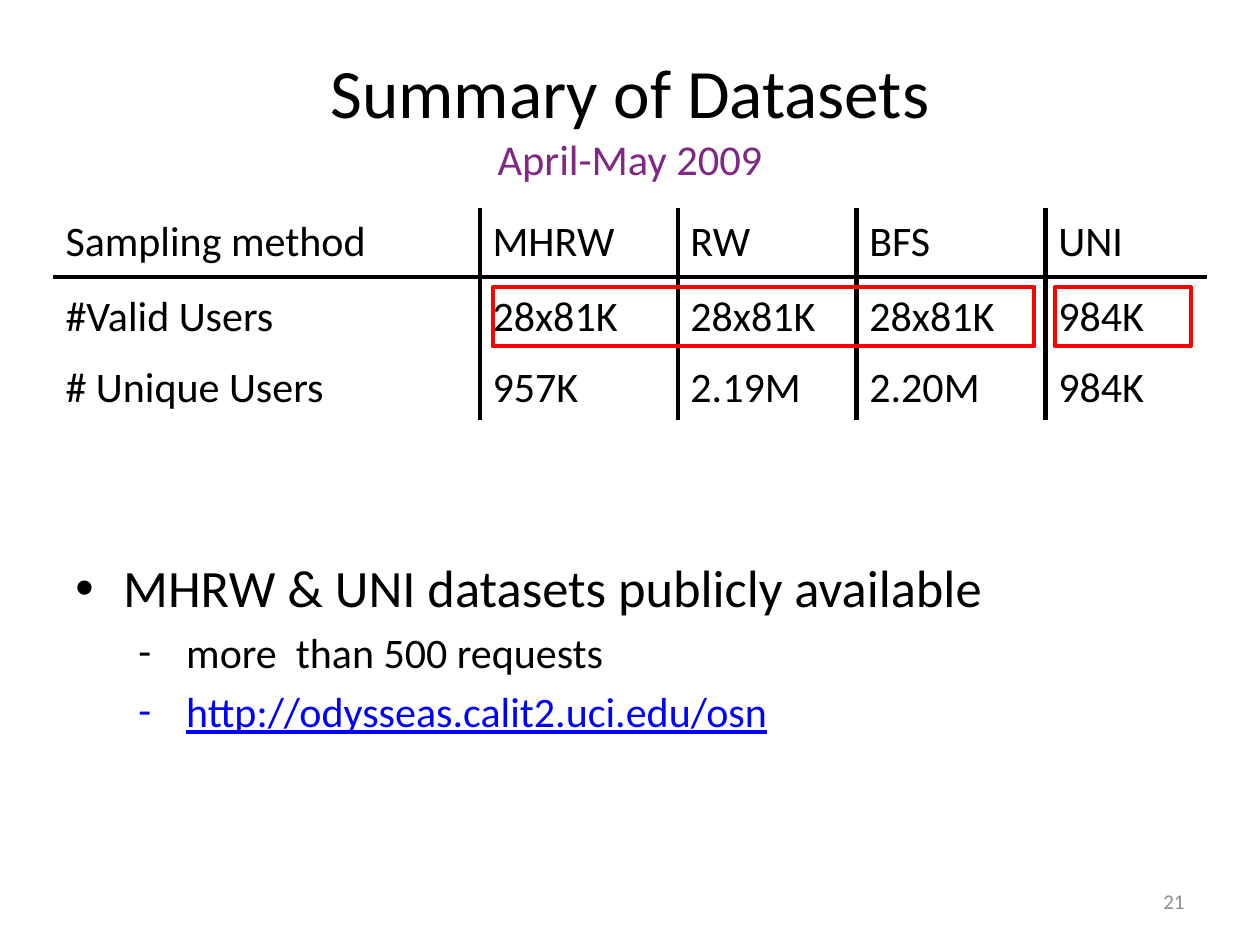
from dataclasses import dataclass
from itertools import accumulate

from lxml import etree
from pptx import Presentation
from pptx.dml.color import RGBColor
from pptx.enum.shapes import MSO_SHAPE
from pptx.enum.text import MSO_ANCHOR, MSO_AUTO_SIZE, PP_ALIGN
from pptx.oxml.ns import qn
from pptx.util import Inches, Pt

RECTANGLE = MSO_SHAPE.RECTANGLE
MIDDLE = MSO_ANCHOR.MIDDLE
NO_FIT = MSO_AUTO_SIZE.NONE
CENTER, RIGHT = PP_ALIGN.CENTER, PP_ALIGN.RIGHT
SLIDE_WIDTH, SLIDE_HEIGHT = Inches(10), Inches(7.5)
GRID_UNIT = SLIDE_WIDTH // 100

ROWS = [
    ["Sampling method", "MHRW", "RW", "BFS", "UNI"],
    ["#Valid Users", "28x81K", "28x81K", "28x81K", "984K"],
    ["# Unique Users", "957K", "2.19M", "2.20M", "984K"],
]
COLUMN_SHARES = [0.37, 0.1715, 0.155, 0.1638, 0.1397]
ROW_SHARES = [0.327, 0.375, 0.298]


@dataclass(frozen=True)
class Theme:
    """Colours, font and type sizes of the slide."""
    font: str = "Calibri"
    ink: str = "000000"
    accent: str = "802884"
    link: str = "0000FF"
    muted: str = "8C8C8C"
    mark: str = "FF0000"
    title: float = 39.6
    subtitle: float = 24.3
    heading: float = 30
    body: float = 24
    footer: float = 12
    rule: float = 3
    outline: float = 2.25


@dataclass(frozen=True)
class Box:
    """A rectangle in grid units, a hundred units to the slide's width."""
    left: float
    top: float
    width: float
    height: float

    def emu(self):
        """Return left, top, width and height as lengths."""
        sides = (self.left, self.top, self.width, self.height)
        return [round(side * GRID_UNIT) for side in sides]


THEME = Theme()


def style(span, size, color=THEME.ink):
    """Set the font, size and colour of a run."""
    span.font.name = THEME.font
    span.font.size = Pt(size)
    span.font.color.rgb = RGBColor.from_string(color)


def add_text(page, box):
    """Add a wrapping text box and return its text frame."""
    frame = page.shapes.add_textbox(*box.emu()).text_frame
    frame.word_wrap = True
    return frame


def fill_title(page, box):
    """Place the two-line title in its placeholder."""
    title = page.shapes.title
    title.left, title.top, title.width, title.height = box.emu()
    frame = title.text_frame
    frame.text = "Summary of Datasets\vApril-May 2009"
    frame.auto_size = NO_FIT
    frame.vertical_anchor = MIDDLE
    para = frame.paragraphs[0]
    para.alignment = CENTER
    heading, period = para.runs
    style(heading, THEME.title)
    style(period, THEME.subtitle, THEME.accent)


def set_borders(cell, ruled):
    """Rule the named sides of a cell and clear its other sides."""
    properties = cell._tc.get_or_add_tcPr()
    for position, side in enumerate("LRTB"):
        line = etree.Element(qn(f"a:ln{side}"), w=str(Pt(THEME.rule)))
        if side in ruled:
            fill = etree.SubElement(line, qn("a:solidFill"))
            etree.SubElement(fill, qn("a:srgbClr"), val=THEME.ink)
        else:
            etree.SubElement(line, qn("a:noFill"))
        properties.insert(position, line)


def ruled_sides(row, column):
    """Name the sides with a rule: between columns and below the header."""
    left = "L" if column > 0 else ""
    right = "R" if column < len(COLUMN_SHARES) - 1 else ""
    return left + right + {0: "B", 1: "T"}.get(row, "")


def add_dataset_table(page, box):
    """Build the table of sampling methods."""
    frame = page.shapes.add_table(len(ROWS), len(COLUMN_SHARES), *box.emu())
    table = frame.table
    table.first_row = table.horz_banding = False
    for column, share in zip(table.columns, COLUMN_SHARES):
        column.width = round(box.width * share * GRID_UNIT)
    for row, share in zip(table.rows, ROW_SHARES):
        row.height = round(box.height * share * GRID_UNIT)
    for r, words in enumerate(ROWS):
        for c, word in enumerate(words):
            cell = table.cell(r, c)
            cell.text = word
            cell.vertical_anchor = MIDDLE
            cell.fill.background()
            set_borders(cell, ruled_sides(r, c))
            style(cell.text_frame.paragraphs[0].runs[0], THEME.body)


def add_marks(page, box):
    """Outline the valid users of the crawls and of the uniform sample."""
    edges = [box.left + box.width * share for share in accumulate(COLUMN_SHARES)]
    top = box.top + box.height * ROW_SHARES[0] + 0.8
    height = box.height * ROW_SHARES[1] - 1.6
    for left, right in ((edges[0] + 1, edges[3] - 0.9), (edges[3] + 0.7, edges[4] - 1.3)):
        area = Box(left, top, right - left, height)
        mark = page.shapes.add_shape(RECTANGLE, *area.emu())
        mark.shadow.inherit = False
        mark.fill.background()
        mark.line.color.rgb = RGBColor.from_string(THEME.mark)
        mark.line.width = Pt(THEME.outline)


def add_bullet(para, sign, indent):
    """Give a paragraph a hanging bullet."""
    properties = para._p.get_or_add_pPr()
    properties.set("marL", str(Inches(indent)))
    properties.set("indent", str(-Inches(0.38)))
    font = etree.SubElement(properties, qn("a:buFont"))
    font.set("typeface", "Arial" if sign == "•" else THEME.font)
    etree.SubElement(properties, qn("a:buChar"), char=sign)


def add_availability(page, box):
    """Write the bullets on where the datasets can be had."""
    lines = [
        ("MHRW & UNI datasets publicly available", 0, THEME.heading, THEME.ink),
        ("more  than 500 requests", 1, THEME.body, THEME.ink),
        ("http://odysseas.calit2.uci.edu/osn", 1, THEME.body, THEME.link),
    ]
    frame = add_text(page, box)
    for number, (words, level, size, color) in enumerate(lines):
        para = frame.add_paragraph() if number else frame.paragraphs[0]
        para.text = words
        para.level = level
        para.space_before = Pt(size * 0.2 if number else 0)
        add_bullet(para, "-" if level else "•", 0.38 + level * 0.5)
        span = para.runs[0]
        style(span, size, color)
        span.font.underline = color == THEME.link


def add_page_number(page, box):
    """Write the page number at the lower right."""
    frame = add_text(page, box)
    frame.text = "21"
    frame.vertical_anchor = MIDDLE
    para = frame.paragraphs[0]
    para.alignment = RIGHT
    style(para.runs[0], THEME.footer, THEME.muted)


def main():
    """Build and save the slide."""
    deck = Presentation()
    deck.slide_width, deck.slide_height = SLIDE_WIDTH, SLIDE_HEIGHT
    page = deck.slides.add_slide(deck.slide_layouts[5])
    table_box = Box(4.2, 16.5, 91.6, 16.8)
    fill_title(page, Box(5, 3, 90, 12.5))
    add_dataset_table(page, table_box)
    add_availability(page, Box(5, 43.6, 90, 23.4))
    add_marks(page, table_box)
    add_page_number(page, Box(71.7, 69.5, 23.3, 4))
    deck.save("out.pptx")


if __name__ == "__main__":
    main()
